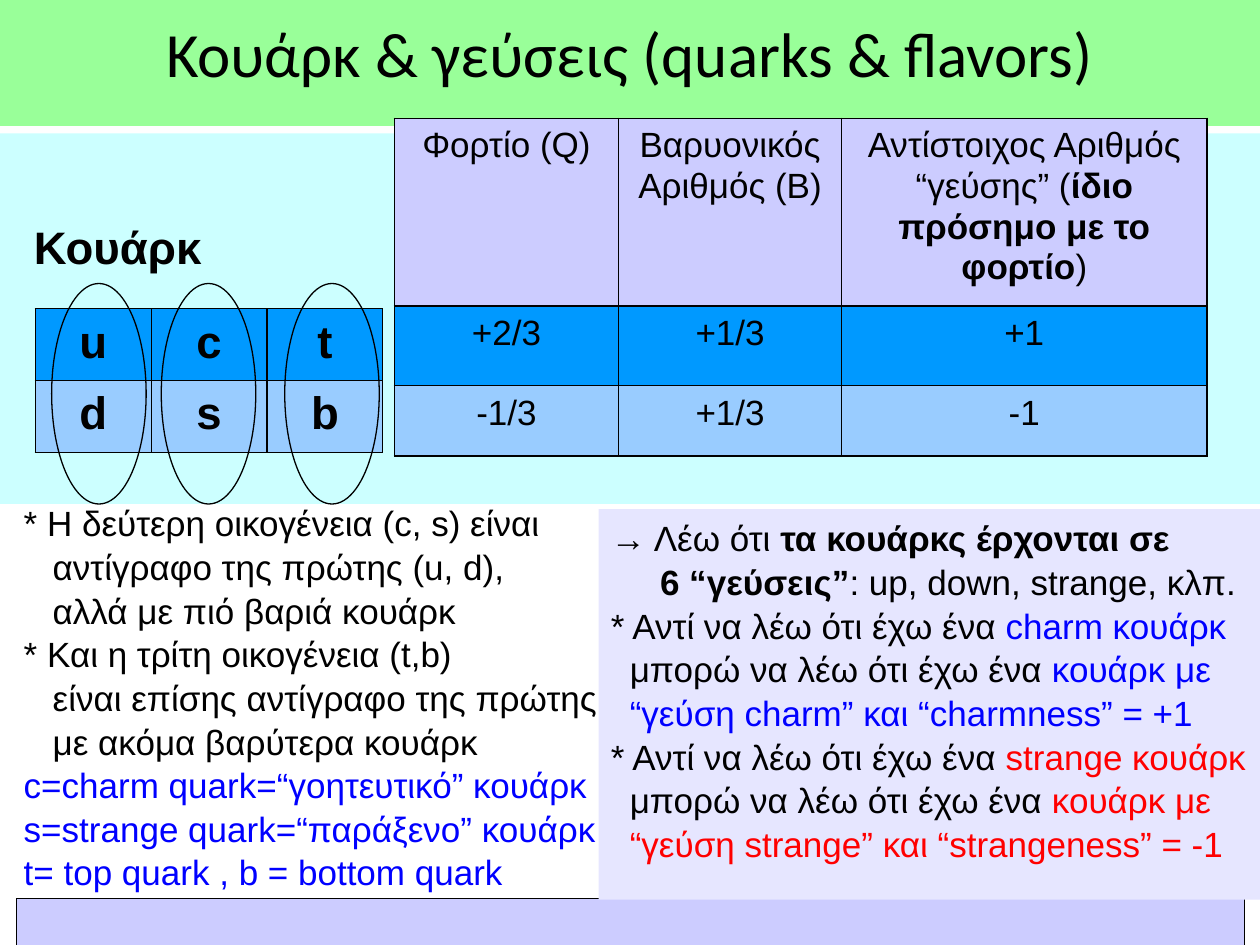
from lxml.etree import SubElement
from pptx import Presentation
from pptx.dml.color import RGBColor as RGB
from pptx.enum.shapes import MSO_SHAPE as SHAPE
from pptx.enum.text import MSO_ANCHOR as ANCHOR, PP_ALIGN as ALIGN
from pptx.oxml.ns import qn
from pptx.util import Inches, Pt

BLACK, BLUE, RED = RGB(0, 0, 0), RGB(0, 0, 255), RGB(255, 0, 0)
GREEN = RGB(0x99, 0xFF, 0x99)
CYAN = RGB(0xCC, 0xFF, 0xFF)
LILAC = RGB(0xCC, 0xCC, 0xFF)
PALE_LILAC = RGB(0xE6, 0xE6, 0xFF)
UP_BLUE = RGB(0, 0x99, 0xFF)
DOWN_BLUE = RGB(0x99, 0xCC, 0xFF)

COLS, ROWS = 100, 75
WIDTH, HEIGHT = Inches(10), Inches(7.5)
BOLD = {"bold": True}
BODY = {"size": Pt(20), "name": "Arial", "color": BLACK, "bold": False}
LARGE = BODY | BOLD | {"size": Pt(26)}
TITLE = BODY | {"size": Pt(36), "name": "Calibri"}
IN_BLUE, IN_RED = {"color": BLUE}, {"color": RED}


class Board:
    """Holds the slide, its grid of COLS by ROWS and the line spacing."""

    def __init__(self, slide, spacing=1.04):
        self.slide, self.spacing = slide, spacing

    def x(self, cols):
        return int(WIDTH * cols / COLS)

    def y(self, rows):
        return int(HEIGHT * rows / ROWS)

    def place(self, left, top, width, height):
        return self.x(left), self.y(top), self.x(width), self.y(height)

    def shape(self, kind, box, fill=None, line=None):
        sp = self.slide.shapes.add_shape(kind, *self.place(*box))
        sp.shadow.inherit = False
        if fill is None:
            sp.fill.background()
        else:
            sp.fill.solid()
            sp.fill.fore_color.rgb = fill
        if line is None:
            sp.line.fill.background()
        else:
            sp.line.color.rgb, sp.line.width = line, Pt(0.75)
        return sp

    def set_lines(self, tf, lines, style, align=ALIGN.LEFT, **frame):
        """Each line is an indent in columns followed by (text, format) runs."""
        for key, value in ({"word_wrap": True, "vertical_anchor": ANCHOR.TOP} | frame).items():
            setattr(tf, key, value)
        for i, (indent, *runs) in enumerate(lines):
            p = tf.add_paragraph() if i else tf.paragraphs[0]
            p.alignment, p.line_spacing = align, self.spacing
            if indent:
                p._p.get_or_add_pPr().set("marL", str(self.x(indent)))
            for text, fmt in runs:
                r = p.add_run()
                r.text = text
                for key, value in (style | fmt).items():
                    if key == "color":
                        r.font.color.rgb = value
                    else:
                        setattr(r.font, key, value)

    def text(self, box, lines, style=BODY):
        sp = self.slide.shapes.add_textbox(*self.place(*box))
        self.set_lines(sp.text_frame, lines, style)

    def table(self, left, top, widths, heights, rows, fills, style, border):
        box = self.place(left, top, sum(widths), sum(heights))
        table = self.slide.shapes.add_table(len(heights), len(widths), *box).table
        for col, width in zip(table.columns, widths):
            col.width = self.x(width)
        for row, height, cells, fill in zip(table.rows, heights, rows, fills):
            row.height = self.y(height)
            for cell, runs in zip(row.cells, cells):
                runs = [(runs, {})] if isinstance(runs, str) else runs
                self.set_lines(cell.text_frame, [(0, *runs)], style, ALIGN.CENTER)
                self.borders(cell, border)
                cell.fill.solid()
                cell.fill.fore_color.rgb = fill

    def borders(self, cell, width):
        tc_pr = cell._tc.get_or_add_tcPr()
        for side in ("a:lnL", "a:lnR", "a:lnT", "a:lnB"):
            ln = SubElement(tc_pr, qn(side), w=str(int(Pt(width))))
            fill = SubElement(ln, qn("a:solidFill"))
            SubElement(fill, qn("a:srgbClr"), val=str(BLACK))


def main():
    prs = Presentation()
    prs.slide_width, prs.slide_height = WIDTH, HEIGHT
    board = Board(prs.slides.add_slide(prs.slide_layouts[6]))

    board.shape(SHAPE.RECTANGLE, (1.3, 71.3, 97.5, 5.4), LILAC, BLACK)
    board.shape(SHAPE.RECTANGLE, (0, 10.6, 100, 29.4), CYAN)
    banner = board.shape(SHAPE.RECTANGLE, (0, 0, 100, 10), GREEN)
    board.set_lines(banner.text_frame, [(0, ("Κουάρκ & γεύσεις (quarks & flavors)", {}))],
                    TITLE, ALIGN.CENTER, vertical_anchor=ANCHOR.MIDDLE,
                    margin_top=0, margin_bottom=board.y(2))

    board.table(2.8, 24.5, [9.2] * 3, [5.7] * 2, ["uct", "dsb"],
                [UP_BLUE, DOWN_BLUE], LARGE, 0.75)
    board.text((1.7, 16.7, 23.5, 5.3), [(0, ("Κουάρκ", {}))], LARGE)
    flavor = [("Αντίστοιχος Αριθμός “γεύσης” (", {}),
              ("ίδιο πρόσημο με το φορτίο", BOLD), (")", {})]
    board.table(31.3, 9.4, [17.8, 17.7, 29], [14.9, 6.3, 5.6],
                [["Φορτίο (Q)", "Βαρυονικός Αριθμός (Β)", flavor],
                 ["+2/3", "+1/3", "+1"],
                 ["-1/3", "+1/3", "-1"]],
                [LILAC, UP_BLUE, DOWN_BLUE], BODY, 1)
    for left in (4.1, 12.8, 22.6):
        board.shape(SHAPE.OVAL, (left, 22.5, 7.5, 17.5), line=BLACK)

    board.text((0.9, 39.2, 49, 34.3), [
        (0, ("* Η δεύτερη οικογένεια (c, s) είναι", {})),
        (2.3, ("αντίγραφο της πρώτης (u, d),", {})),
        (2.3, ("αλλά με πιό βαριά κουάρκ", {})),
        (0, ("* Και η τρίτη οικογένεια (t,b)", {})),
        (2.3, ("είναι επίσης αντίγραφο της πρώτης,", {})),
        (2.3, ("με ακόμα βαρύτερα κουάρκ", {})),
        (0, ("c=charm quark=“γοητευτικό” κουάρκ", IN_BLUE)),
        (0, ("s=strange quark=“παράξενο” κουάρκ", IN_BLUE)),
        (0, ("t= top quark , b = bottom quark", IN_BLUE)),
    ])

    lines = [
        (0, ("→ Λέω ότι ", {}), ("τα κουάρκς έρχονται σε", BOLD)),
        (3.9, ("6 “γεύσεις”", BOLD), (": up, down, strange, κλπ.", {})),
    ]
    for name, number, color in (("charm", "+1", IN_BLUE), ("strange", "-1", IN_RED)):
        lines += [
            (0, ("* Αντί να λέω ότι έχω ένα ", {}), (f"{name} κουάρκ", color)),
            (1.5, ("μπορώ να λέω ότι έχω ένα ", {}), ("κουάρκ με", color)),
            (1.5, (f"“γεύση {name}” και “{name}ness” = {number}", color)),
        ]
    panel = board.shape(SHAPE.RECTANGLE, (47.5, 40.4, 52.5, 31), PALE_LILAC)
    board.set_lines(panel.text_frame, lines, BODY, margin_right=0)

    prs.save("out.pptx")


if __name__ == "__main__":
    main()
